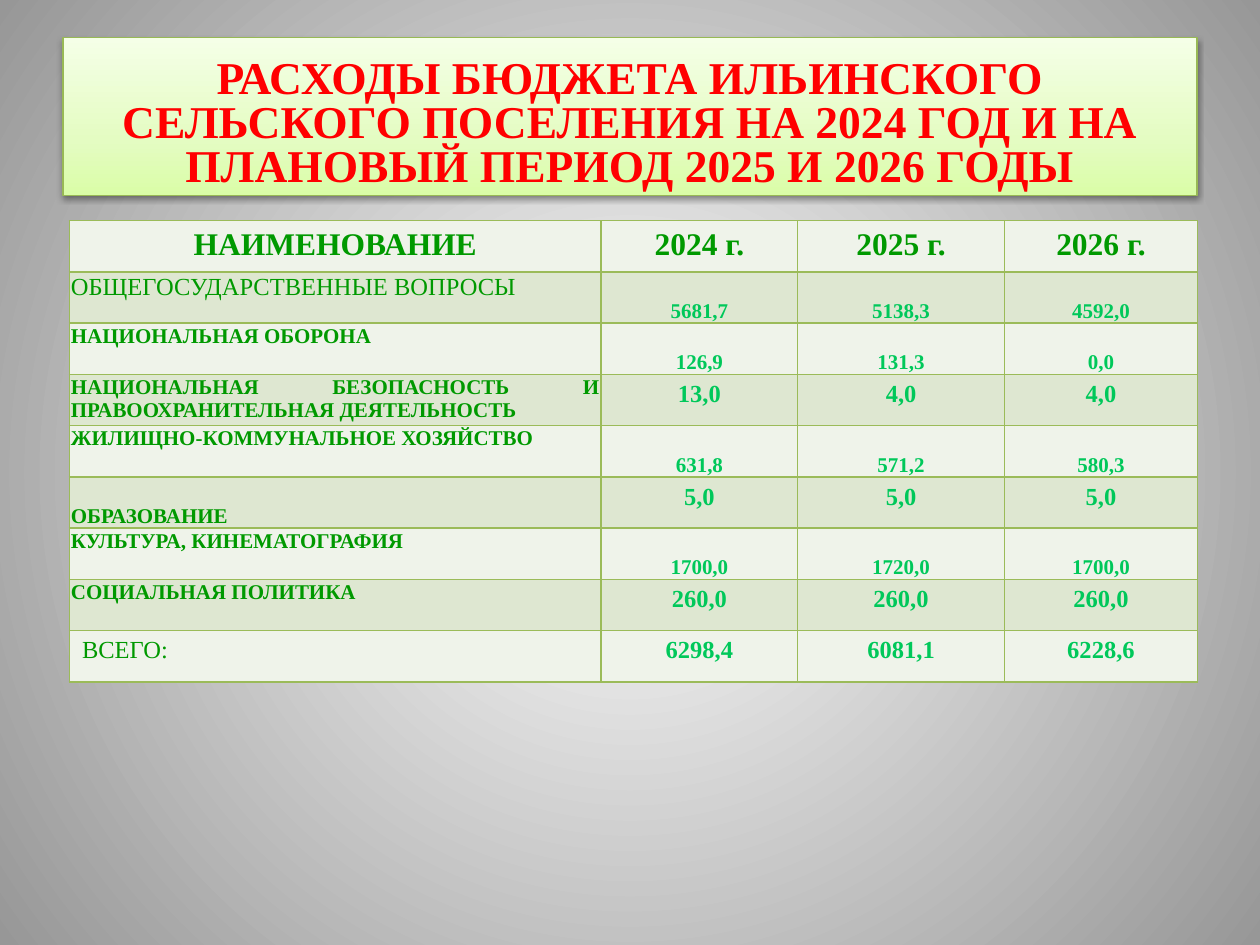
from lxml.etree import SubElement
from pptx import Presentation
from pptx.dml.color import RGBColor
from pptx.enum.shapes import MSO_SHAPE as Shape
from pptx.enum.text import MSO_ANCHOR as Anchor, MSO_AUTO_SIZE as AutoSize, PP_ALIGN as Align
from pptx.oxml import parse_xml
from pptx.oxml.ns import nsdecls, qn
from pptx.util import Cm, Pt

COLORS = {
    "title": "FF0000", "title_line": "98B955", "shadow": "000000",
    "label": "009900", "value": "00C85A", "border": "9BBB59",
    "light": "EFF3EA", "dark": "DEE7D1",
}
PAGE_STOPS = [(0, "FFFFFF"), (100, "979797")]
TITLE_STOPS = [(0, "DAFDA7"), (35, "E4FCC2"), (100, "F5FFE7")]
CENTER_PATH = '<a:path path="circle"><a:fillToRect l="50000" t="50000" r="50000" b="50000"/></a:path>'
UPWARD = '<a:lin ang="16200000" scaled="0"/>'

TITLE = "РАСХОДЫ БЮДЖЕТА ИЛЬИНСКОГО СЕЛЬСКОГО ПОСЕЛЕНИЯ НА 2024 ГОД И НА ПЛАНОВЫЙ ПЕРИОД 2025 И 2026 ГОДЫ"
HEADINGS = ["НАИМЕНОВАНИЕ", "2024 г.", "2025 г.", "2026 г."]
COLUMN_WIDTHS = [10.72, 3.96, 4.17, 3.89]

HEADING = dict(size=18, color="label")
NAME = dict(size=12, color="label", align=Align.JUSTIFY, tight=True)
PLAIN_NAME = {**NAME, "size": 14, "bold": False}
LOW_NAME = {**NAME, "anchor": Anchor.BOTTOM}
TOTAL_NAME = dict(size=14, color="label", align=Align.LEFT, bold=False)
VALUE = dict(size=14, color="value")
LOW_VALUE = dict(size=12, color="value", anchor=Anchor.BOTTOM, tight=True)

EXPENSES = [
    ("ОБЩЕГОСУДАРСТВЕННЫЕ ВОПРОСЫ", PLAIN_NAME, ["5681,7", "5138,3", "4592,0"], LOW_VALUE),
    ("НАЦИОНАЛЬНАЯ ОБОРОНА", NAME, ["126,9", "131,3", "0,0"], LOW_VALUE),
    ("НАЦИОНАЛЬНАЯ БЕЗОПАСНОСТЬ И ПРАВООХРАНИТЕЛЬНАЯ ДЕЯТЕЛЬНОСТЬ", NAME, ["13,0", "4,0", "4,0"], VALUE),
    ("ЖИЛИЩНО-КОММУНАЛЬНОЕ ХОЗЯЙСТВО", NAME, ["631,8", "571,2", "580,3"], LOW_VALUE),
    ("ОБРАЗОВАНИЕ", LOW_NAME, ["5,0", "5,0", "5,0"], VALUE),
    ("КУЛЬТУРА, КИНЕМАТОГРАФИЯ", NAME, ["1700,0", "1720,0", "1700,0"], LOW_VALUE),
    ("СОЦИАЛЬНАЯ ПОЛИТИКА", NAME, ["260,0", "260,0", "260,0"], VALUE),
    ("ВСЕГО:", TOTAL_NAME, ["6298,4", "6081,1", "6228,6"], VALUE),
]


class BudgetSlide:
    """Holds the slide and its style, and draws each kind of element."""

    font = "Times New Roman"

    def __init__(self, slide):
        self.slide = slide

    def rgb(self, name):
        return RGBColor.from_string(COLORS[name])

    def gradient(self, fill, owner, stops, direction):
        fill.background()
        blank = owner.find(".//" + qn("a:noFill"))
        marks = "".join(
            f'<a:gs pos="{place * 1000}"><a:srgbClr val="{color}"/></a:gs>' for place, color in stops
        )
        blank.getparent().replace(blank, parse_xml(
            f'<a:gradFill {nsdecls("a")} rotWithShape="1"><a:gsLst>{marks}</a:gsLst>{direction}</a:gradFill>'
        ))

    def background(self):
        self.gradient(self.slide.background.fill, self.slide.element, PAGE_STOPS, CENTER_PATH)

    def text(self, frame, words, size, color, align=Align.CENTER, bold=True):
        frame.text = words
        paragraph = frame.paragraphs[0]
        paragraph.alignment = align
        font = paragraph.runs[0].font
        font.name, font.size, font.bold = self.font, Pt(size), bold
        font.color.rgb = self.rgb(color)

    def shadow(self, banner):
        banner.shadow.inherit = False
        effects = banner.element.spPr.find(qn("a:effectLst"))
        outer = SubElement(effects, qn("a:outerShdw"), blurRad="40000", dist="20000",
                           dir="5400000", rotWithShape="0")
        tint = SubElement(outer, qn("a:srgbClr"), val=COLORS["shadow"])
        SubElement(tint, qn("a:alpha"), val="38000")

    def title(self, words, left, top, width, height):
        banner = self.slide.shapes.add_shape(Shape.RECTANGLE, Cm(left), Cm(top), Cm(width), Cm(height))
        self.gradient(banner.fill, banner.element.spPr, TITLE_STOPS, UPWARD)
        banner.line.color.rgb = self.rgb("title_line")
        banner.line.width = Pt(0.75)
        self.shadow(banner)
        frame = banner.text_frame
        frame.word_wrap = True
        frame.vertical_anchor = Anchor.MIDDLE
        frame.auto_size = AutoSize.TEXT_TO_FIT_SHAPE
        banner.element.find(".//" + qn("a:normAutofit")).set("fontScale", "90000")
        self.text(frame, words, 28, "title")

    def cell(self, cell, words, band, anchor=Anchor.TOP, tight=False, **style):
        self.text(cell.text_frame, words, **style)
        cell.vertical_anchor = anchor
        if tight:
            cell.margin_left = cell.margin_right = cell.margin_top = Cm(0.03)
            cell.margin_bottom = 0
        properties = cell._tc.get_or_add_tcPr()
        for side in ("lnL", "lnR", "lnT", "lnB"):
            border = SubElement(properties, qn("a:" + side), w=str(Pt(1)))
            SubElement(SubElement(border, qn("a:solidFill")), qn("a:srgbClr"), val=COLORS["border"])
        cell.fill.solid()
        cell.fill.fore_color.rgb = self.rgb(band)

    def table(self, rows, left, top, height):
        budget = self.slide.shapes.add_table(
            len(rows), len(COLUMN_WIDTHS), Cm(left), Cm(top), Cm(sum(COLUMN_WIDTHS)), Cm(height)
        ).table
        for column, width in zip(budget.columns, COLUMN_WIDTHS):
            column.width = Cm(width)
        for r, entries in enumerate(rows):
            for c, (words, style) in enumerate(entries):
                self.cell(budget.cell(r, c), words, "dark" if r % 2 else "light", **style)


def main():
    deck = Presentation()
    deck.slide_width, deck.slide_height = Cm(25.4), Cm(19.05)
    page = BudgetSlide(deck.slides.add_slide(deck.slide_layouts[6]))
    page.background()
    page.title(TITLE, 1.27, 0.76, 22.86, 3.18)
    rows = [[(heading, HEADING) for heading in HEADINGS]]
    for name, name_style, values, value_style in EXPENSES:
        rows.append([(name, name_style)] + [(value, value_style) for value in values])
    page.table(rows, 1.4, 4.45, 9.3)
    deck.save("out.pptx")


if __name__ == "__main__":
    main()
